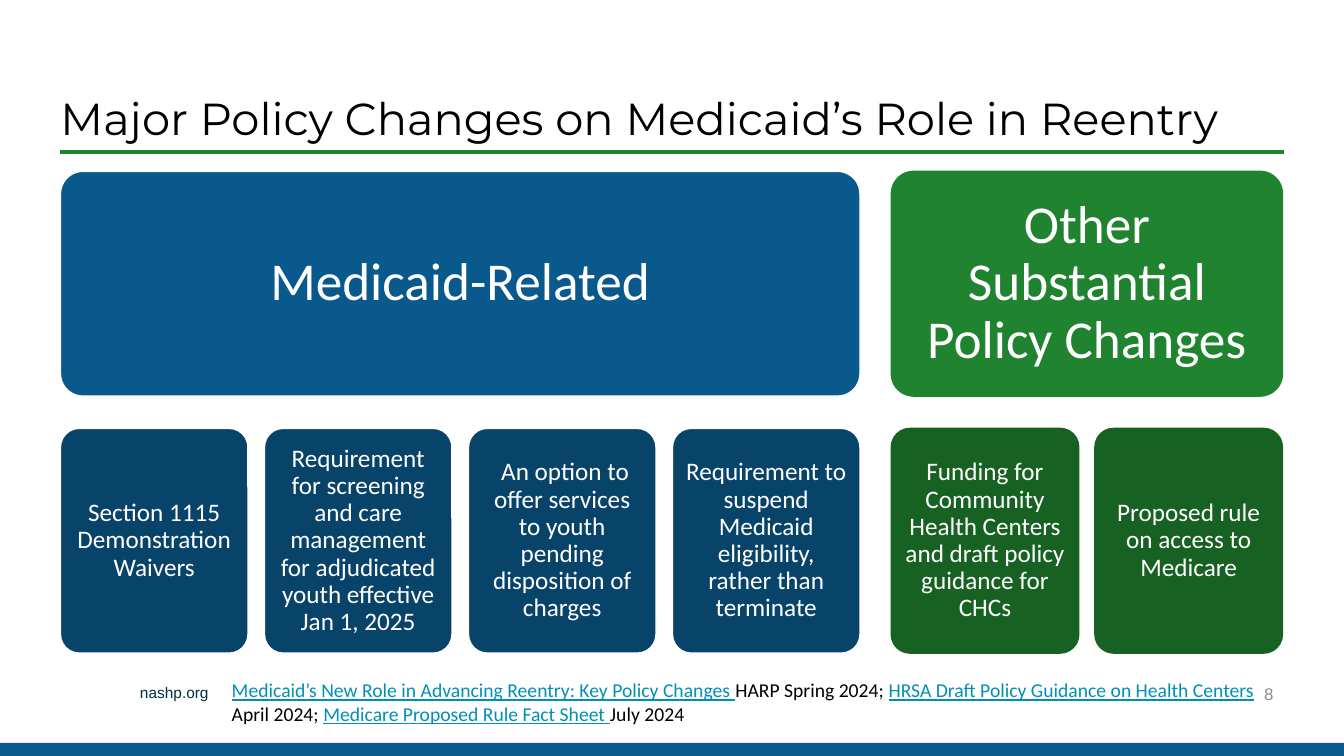
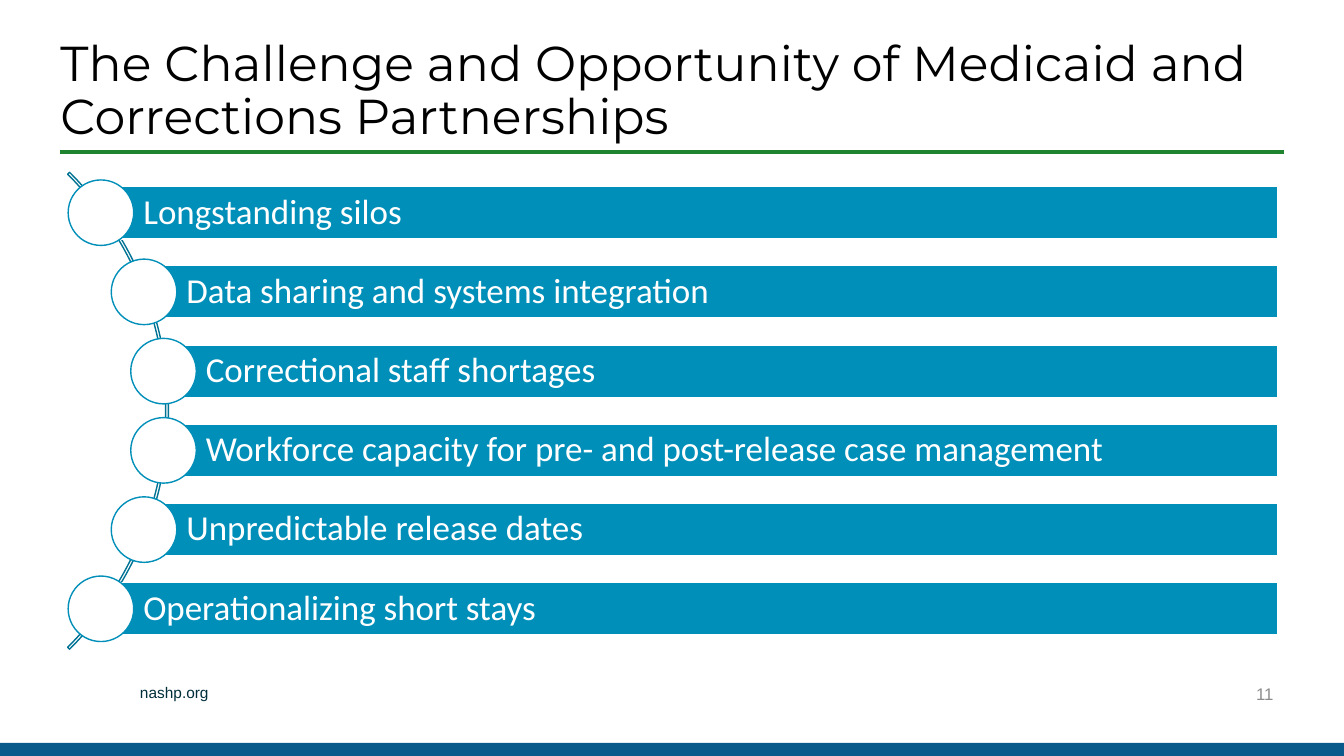
from dataclasses import dataclass
from math import sqrt

from lxml import etree
from pptx import Presentation
from pptx.dml.color import RGBColor
from pptx.enum.shapes import MSO_CONNECTOR, MSO_SHAPE
from pptx.enum.text import MSO_ANCHOR, MSO_AUTO_SIZE, PP_ALIGN
from pptx.oxml.ns import qn
from pptx.util import Inches, Pt

RECT, ROUND = MSO_SHAPE.RECTANGLE, MSO_SHAPE.ROUNDED_RECTANGLE
OVAL, ARC = MSO_SHAPE.OVAL, MSO_SHAPE.BLOCK_ARC
LEFT, CENTER, RIGHT = PP_ALIGN.LEFT, PP_ALIGN.CENTER, PP_ALIGN.RIGHT
TOP, MIDDLE, BOTTOM = MSO_ANCHOR.TOP, MSO_ANCHOR.MIDDLE, MSO_ANCHOR.BOTTOM


@dataclass(frozen=True)
class Theme:
    title_font: str = "Montserrat"
    body_font: str = "Calibri"
    footer_font: str = "Arial"
    black: str = "000000"
    white: str = "FFFFFF"
    band: str = "0A5A8C"
    blue: str = "0A598C"
    navy: str = "084369"
    green: str = "1F832F"
    forest: str = "176223"
    teal: str = "008FB9"
    arc: str = "007394"
    footer: str = "002E3B"
    number: str = "8C8C8C"
    header_size: int = 38
    bar_size: int = 25
    card_size: int = 18
    source_size: int = 14
    number_size: int = 12
    footer_size: int = 11


T = Theme()

# Each group: heading, left, width, heading fill, card fill, outlines, cards
POLICY = {
    "title": "Major Policy Changes on Medicaid’s Role in Reentry",
    "title_size": 32,
    "number": "8",
    "groups": [
        ("Medicaid-Related", 0.6, 7.93, T.blue, T.navy, (T.white, T.white), [
            "Section 1115 Demonstration Waivers",
            "Requirement for screening and care management for adjudicated "
            "youth effective Jan 1, 2025",
            " An option to offer services to youth pending disposition of charges",
            "Requirement to suspend Medicaid eligibility, rather than terminate",
        ]),
        ("Other Substantial Policy Changes", 8.84, 3.88, T.green, T.forest,
         (T.green, T.forest), [
             "Funding for Community Health Centers and draft policy guidance for CHCs",
             "Proposed rule on access to Medicare",
         ]),
    ],
    "sources": [
        ("Medicaid’s New Role in Advancing Reentry: Key Policy Changes ",
         "HARP Spring 2024; "),
        ("HRSA Draft Policy Guidance on Health Centers ", "April 2024; "),
        ("Medicare Proposed Rule Fact Sheet ", "July 2024"),
    ],
}
CHALLENGE = {
    "title": "The Challenge and Opportunity of Medicaid and Corrections Partnerships",
    "title_size": 35,
    "number": "11",
    "bars": [
        "Longstanding silos",
        "Data sharing and systems integration",
        "Correctional staff shortages",
        "Workforce capacity for pre- and post-release case management",
        "Unpredictable release dates",
        "Operationalizing short stays",
    ],
}


def color(value):
    return RGBColor.from_string(value)


def box(*lengths):
    return [Inches(n) for n in lengths]


def style(font, name, size, ink):
    font.name, font.size, font.color.rgb = name, Pt(size), color(ink)


def frame(tf, anchor, margins=(0.1, 0.05, 0.1, 0.05)):
    tf.word_wrap, tf.vertical_anchor = True, anchor
    tf.auto_size = MSO_AUTO_SIZE.NONE
    tf.margin_left, tf.margin_top, tf.margin_right, tf.margin_bottom = box(*margins)


def write(tf, text, name, size, ink, align=LEFT, spacing=1.0):
    tf.text = text
    p = tf.paragraphs[0]
    p.alignment, p.line_spacing = align, spacing
    for r in p.runs:
        style(r.font, name, size, ink)


def add_text(s, at, anchor, *args, **kwargs):
    sp = s.shapes.add_textbox(*box(*at))
    frame(sp.text_frame, anchor)
    write(sp.text_frame, *args, **kwargs)
    return sp


def add_shape(s, kind, at, fill=None, line=None):
    sp = s.shapes.add_shape(kind, *box(*at))
    sp.shadow.inherit = False
    if fill:
        sp.fill.solid()
        sp.fill.fore_color.rgb = color(fill)
    else:
        sp.fill.background()
    if line:
        sp.line.color.rgb, sp.line.width = color(line), Pt(1)
    else:
        sp.line.fill.background()
    return sp


def build_layout(prs):
    """Prepare the title-only layout with the shared rule, band and footer."""
    layout = prs.slide_layouts[5]
    for ph in list(layout.placeholders):
        if ph.placeholder_format.idx:
            ph.element.getparent().remove(ph.element)
    title = layout.placeholders[0]
    title.left, title.top, title.width, title.height = box(0.6, 0.21, 12.14, 1.28)
    frame(title.text_frame, BOTTOM, (0, 0.05, 0.1, 0.05))
    return layout


def add_shared_parts(s, layout):
    """Draw the shared parts and move them to the layout."""
    footer = add_text(s, (1.29, 6.73, 6.27, 0.29), TOP, "nashp.org",
                      T.footer_font, T.footer_size, T.footer)
    band = add_shape(s, RECT, (0, 7.37, 13.33, 0.13), T.band)
    rule = s.shapes.add_connector(MSO_CONNECTOR.STRAIGHT, *box(0.6, 1.51, 12.74, 1.51))
    rule.line.color.rgb, rule.line.width = color(T.green), Pt(3)
    etree.SubElement(rule.element.spPr, qn("a:effectLst"))
    for sp in (footer, band, rule):
        layout.shapes.element.append(sp.element)


def add_slide(prs, layout, content):
    s = prs.slides.add_slide(layout)
    write(s.shapes.title.text_frame, content["title"], T.title_font,
          content["title_size"], T.black, spacing=0.9)
    return s


def add_number(s, content):
    add_text(s, (9.67, 6.68, 3.06, 0.4), MIDDLE, content["number"],
             T.footer_font, T.number_size, T.number, align=RIGHT)


def add_card(s, at, text, size, inset, fill, line):
    sp = add_shape(s, ROUND, at, fill, line)
    sp.adjustments[0] = 0.1
    frame(sp.text_frame, MIDDLE, [inset] * 4)
    write(sp.text_frame, text, T.body_font, size, T.white, CENTER, 0.9)


def add_groups(s, groups):
    height, card_width = 2.23, 1.86
    for heading, left, width, fill, card_fill, lines, cards in groups:
        add_card(s, (left, 1.7, width, height), heading, T.header_size, 0.16,
                 fill, lines[0])
        pitch = (width - card_width) / (len(cards) - 1)
        for i, text in enumerate(cards):
            add_card(s, (left + i * pitch, 4.25, card_width, height), text,
                     T.card_size, 0.07, card_fill, lines[1])


def add_sources(s, sources):
    sp = s.shapes.add_textbox(*box(2.2, 6.68, 10.52, 0.57))
    frame(sp.text_frame, TOP)
    p = sp.text_frame.paragraphs[0]
    for name, date in sources:
        for text, ink, underline in ((name, T.teal, True), (date, T.black, False)):
            r = p.add_run()
            r.text = text
            style(r.font, T.body_font, T.source_size, ink)
            r.font.underline = underline


def add_arc_list(s, bars):
    """Place bars and circles along an arc centred left of the slide."""
    cx, cy, radius, path_radius = -1.675, 4.075, 3.345, 3.32
    pitch, bar_height, circle, right = 0.786, 0.52, 0.65, 12.67
    arc = add_shape(s, ARC, (cx - radius, cy - radius, 2 * radius, 2 * radius),
                    line=T.arc)
    for i, value in enumerate((189, 27, 0.004)):
        arc.adjustments[i] = value
    for i, text in enumerate(bars):
        dy = (i - (len(bars) - 1) / 2) * pitch
        x, y = cx + sqrt(path_radius ** 2 - dy ** 2), cy + dy
        bar = add_shape(s, RECT, (x, y - bar_height / 2, right - x, bar_height),
                        T.teal, T.white)
        frame(bar.text_frame, MIDDLE, (0.42, 0.07, 0.07, 0.07))
        write(bar.text_frame, text, T.body_font, T.bar_size, T.white, spacing=0.9)
        add_shape(s, OVAL, (x - circle / 2, y - circle / 2, circle, circle),
                  T.white, T.teal)


def main():
    prs = Presentation()
    prs.slide_width, prs.slide_height = box(13.33, 7.5)
    layout = build_layout(prs)

    s = add_slide(prs, layout, POLICY)
    add_shared_parts(s, layout)
    add_groups(s, POLICY["groups"])
    add_number(s, POLICY)
    add_sources(s, POLICY["sources"])

    s = add_slide(prs, layout, CHALLENGE)
    add_arc_list(s, CHALLENGE["bars"])
    add_number(s, CHALLENGE)

    prs.save("out.pptx")


if __name__ == "__main__":
    main()
